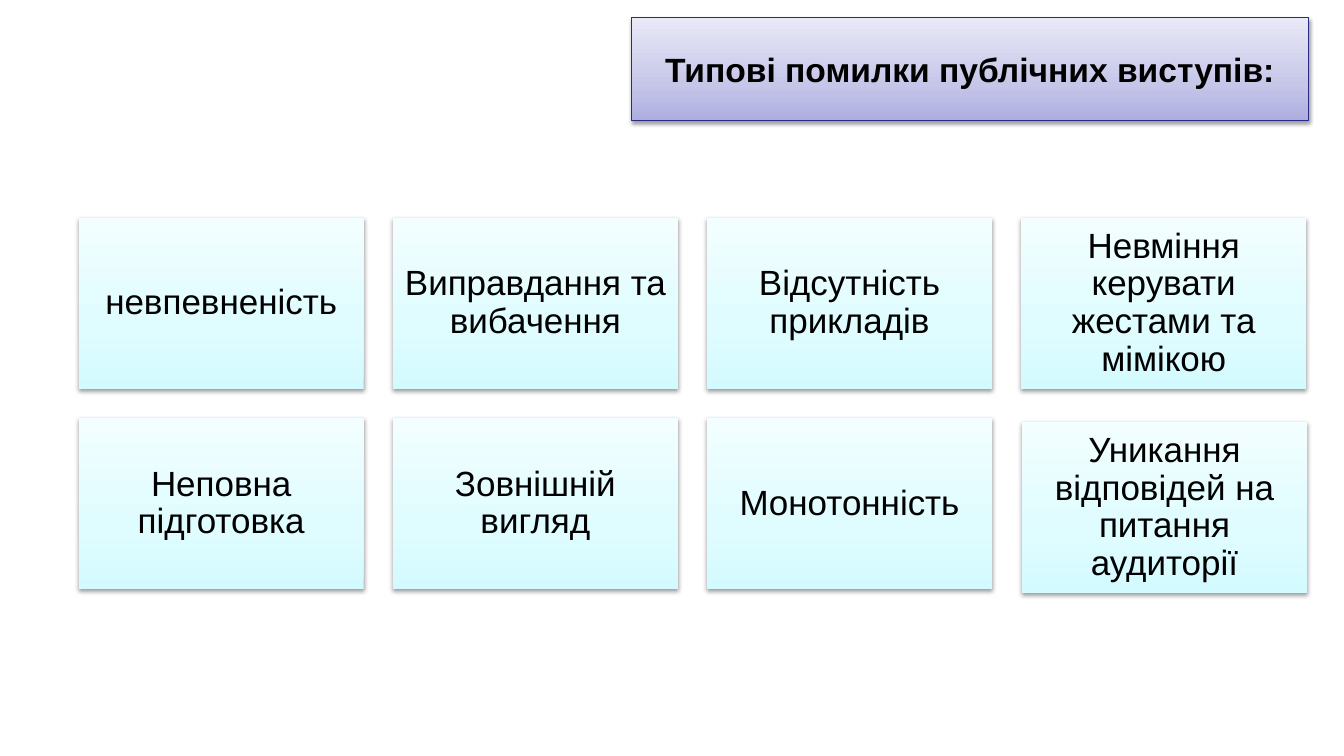
from lxml import etree
from pptx import Presentation
from pptx.dml.color import RGBColor
from pptx.enum.shapes import MSO_SHAPE
from pptx.enum.text import MSO_ANCHOR, PP_ALIGN
from pptx.oxml.ns import qn
from pptx.util import Cm, Pt

RECTANGLE = MSO_SHAPE.RECTANGLE
MIDDLE = MSO_ANCHOR.MIDDLE
CENTER = PP_ALIGN.CENTER

COLORS = {"text": "000000", "shadow": "000000", "title_line": "2A2A89"}
# Gradient stops run from the bottom edge to the top edge.
GRADIENTS = {
    "title": {0: "ADADE1", 35: "C6C6E9", 100: "E9E9F7"},
    "mistake": {0: "D3FBFF", 35: "DFFCFF", 100: "F2FEFF"},
}
TITLE_FONT = {"name": "Arial", "size": Pt(24), "bold": True}
MISTAKE_FONT = {"name": "Arial", "size": Pt(25), "bold": False}

TITLE = "Типові помилки публічних виступів:"
MISTAKES = [
    ["невпевненість", "Виправдання та вибачення", "Відсутність прикладів",
     "Невміння керувати жестами та мімікою"],
    ["Неповна підготовка", "Зовнішній вигляд", "Монотонність",
     "Уникання відповідей на питання аудиторії"],
]
GAP = 0.73
LAST_SHIFT = (0.02, 0.1)  # the last card sits slightly off the grid


def add_color(parent, color, alpha=None):
    srgb = etree.SubElement(parent, qn("a:srgbClr"), val=color)
    if alpha is not None:
        etree.SubElement(srgb, qn("a:alpha"), val=str(alpha * 1000))


def fill_gradient(shape, stops):
    shape.fill.gradient()
    shape.fill.gradient_angle = 90
    stop_list = shape._element.spPr.find(".//" + qn("a:gsLst"))
    for default_stop in list(stop_list):
        stop_list.remove(default_stop)
    for percent, color in stops.items():
        add_color(etree.SubElement(stop_list, qn("a:gs"), pos=str(percent * 1000)), color)


def add_soft_shadow(shape):
    shape.shadow.inherit = False
    effects = shape._element.spPr.find(qn("a:effectLst"))
    shadow = etree.SubElement(
        effects, qn("a:outerShdw"), blurRad=str(Pt(3.1)), dist=str(Pt(1.6)),
        dir="5400000", rotWithShape="0")
    add_color(shadow, COLORS["shadow"], alpha=38)


def add_card(slide, box, text, gradient, font_format):
    """Add a shaded rectangle with centred text; box is left, top, width, height in cm."""
    card = slide.shapes.add_shape(RECTANGLE, *map(Cm, box))
    fill_gradient(card, gradient)
    card.line.fill.background()
    add_soft_shadow(card)
    frame = card.text_frame
    frame.word_wrap = True
    frame.vertical_anchor = MIDDLE
    for side in ("left", "top", "right", "bottom"):
        setattr(frame, f"margin_{side}", Cm(0.25))
    paragraph = frame.paragraphs[0]
    paragraph.alignment = CENTER
    run = paragraph.add_run()
    run.text = text
    for attribute, value in font_format.items():
        setattr(run.font, attribute, value)
    run.font.color.rgb = RGBColor.from_string(COLORS["text"])
    return card


def add_title(slide, box):
    title = add_card(slide, box, TITLE, GRADIENTS["title"], TITLE_FONT)
    title.line.color.rgb = RGBColor.from_string(COLORS["title_line"])
    title.line.width = Pt(0.75)


def add_mistakes(slide, box):
    """Spread the mistakes over an even grid inside the box."""
    left, top, width, height = box
    rows, columns = len(MISTAKES), len(MISTAKES[0])
    card_width = (width - GAP * (columns - 1)) / columns
    card_height = (height - GAP * (rows - 1)) / rows
    for row, texts in enumerate(MISTAKES):
        for column, text in enumerate(texts):
            is_last = (row, column) == (rows - 1, columns - 1)
            shift_x, shift_y = LAST_SHIFT if is_last else (0, 0)
            place = (left + column * (card_width + GAP) + shift_x,
                     top + row * (card_height + GAP) + shift_y,
                     card_width, card_height)
            card = add_card(slide, place, text, GRADIENTS["mistake"], MISTAKE_FONT)
            card.text_frame.paragraphs[0].line_spacing = 0.9


def main():
    deck = Presentation()
    deck.slide_width, deck.slide_height = Cm(33.87), Cm(19.05)
    slide = deck.slides.add_slide(deck.slide_layouts[6])
    add_title(slide, (15.92, 0.44, 17.05, 2.6))
    add_mistakes(slide, (1.98, 5.49, 30.94, 9.36))
    deck.save("out.pptx")


if __name__ == "__main__":
    main()
